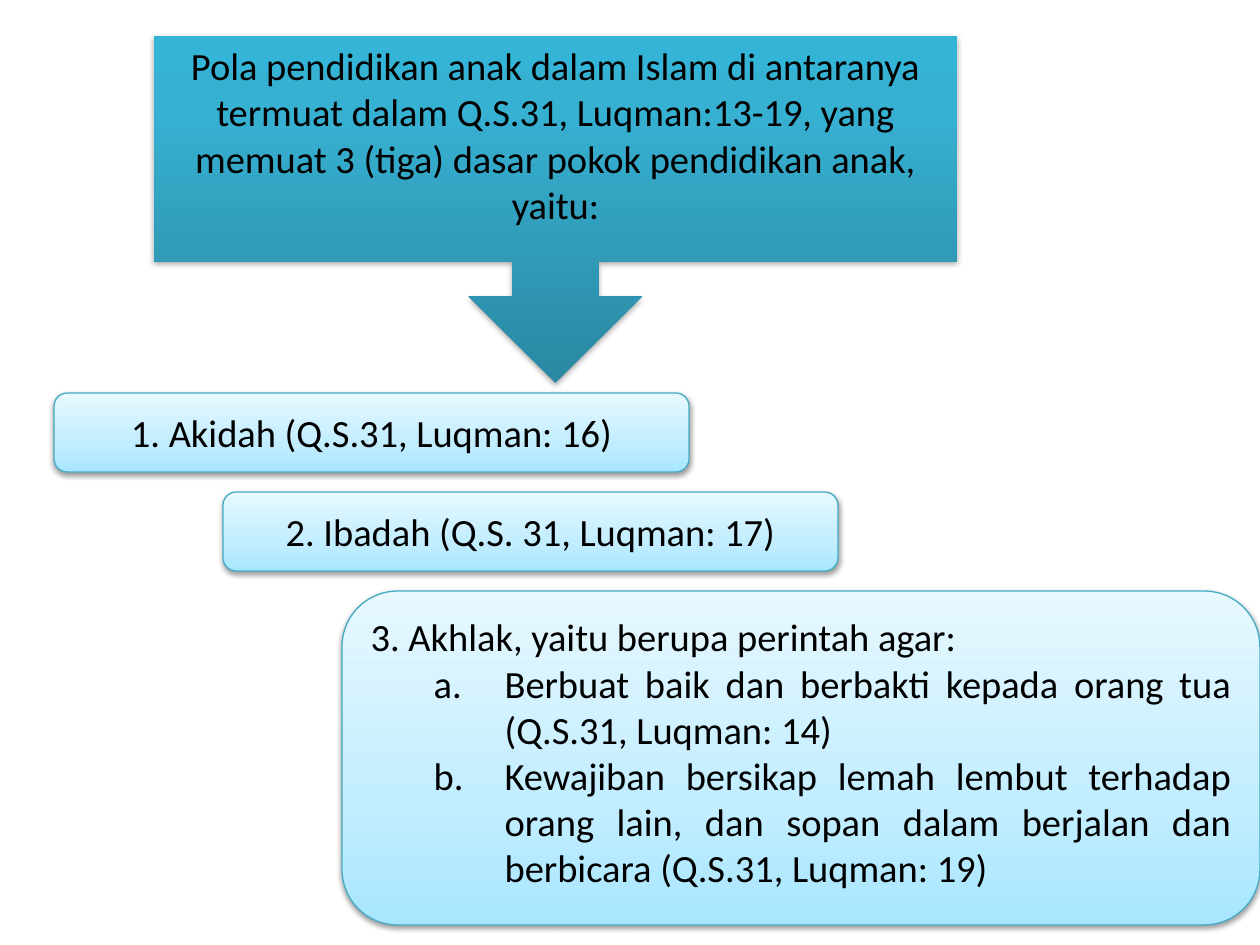
"""Build a slide on the three foundations of child education in Luqman 13-19."""
from copy import deepcopy

from lxml import etree
from pptx import Presentation
from pptx import util as u
from pptx.dml.color import RGBColor
from pptx.enum import shapes, text
from pptx.oxml.ns import qn

PX = 914400 // 126
C = {
    "ink": "000000", "line": "46AAC5",
    "teal_dark": "2A88A2", "teal_mid": "37B1D2", "teal_light": "34B4D6",
    "sky_dark": "A7E6FF", "sky_mid": "C1EDFF", "sky_light": "E7F8FF",
}
TEAL = [(0, "teal_dark"), (0.8, "teal_mid"), (1, "teal_light")]
SKY = [(0, "sky_dark"), (0.35, "sky_mid"), (1, "sky_light")]


def add_box(kind, box, stops, shadow_alpha, shadow_dist):
    sp = s.shapes.add_shape(kind, *[v * PX for v in box])
    sp.fill.gradient()
    sp.fill.gradient_angle = 90
    gs_list = sp._element.spPr.find(".//" + qn("a:gsLst"))
    gs_list.append(deepcopy(gs_list[0]))
    for stop, (position, name) in zip(sp.fill.gradient_stops, stops):
        stop.position = position
        stop.color.rgb = RGBColor.from_string(C[name])
    sp.line.fill.background()
    sp.shadow.inherit = False
    effects = sp._element.spPr.find(qn("a:effectLst"))
    shadow = etree.SubElement(
        effects, qn("a:outerShdw"), blurRad=str(u.Pt(3.1)),
        dist=str(u.Pt(shadow_dist)), dir="5400000", rotWithShape="0")
    color = etree.SubElement(shadow, qn("a:srgbClr"), val=C["ink"])
    etree.SubElement(color, qn("a:alpha"), val=str(shadow_alpha * 1000))
    sp.text_frame.word_wrap = True
    return sp


def add_text(p, words, align):
    p.alignment = align
    r = p.add_run()
    r.text = words
    r.font.name = "Calibri"
    r.font.size = u.Pt(22)
    r.font.color.rgb = RGBColor.from_string(C["ink"])


prs = Presentation()
prs.slide_width, prs.slide_height = u.Inches(10), u.Inches(7.5)
s = prs.slides.add_slide(prs.slide_layouts[6])
AL = text.PP_ALIGN
TOP, MIDDLE = text.MSO_ANCHOR.TOP, text.MSO_ANCHOR.MIDDLE

callout = add_box(shapes.MSO_SHAPE.DOWN_ARROW_CALLOUT, (154, 36, 803, 347), TEAL, 35, 1.8)
callout.text_frame.vertical_anchor = TOP
add_text(callout.text_frame.paragraphs[0],
         "Pola pendidikan anak dalam Islam di antaranya termuat dalam Q.S.31, "
         "Luqman:13-19, yang memuat 3 (tiga) dasar pokok pendidikan anak, yaitu:",
         AL.CENTER)

foundations = [
    ((54, 393, 635, 79), MIDDLE, AL.CENTER, "1. Akidah (Q.S.31, Luqman: 16)", []),
    ((223, 492, 615, 79), MIDDLE, AL.CENTER, "2. Ibadah (Q.S. 31, Luqman: 17)", []),
    ((342, 591, 918, 334), TOP, AL.LEFT, "3. Akhlak, yaitu berupa perintah agar:", [
        "Berbuat baik dan berbakti kepada orang tua (Q.S.31, Luqman: 14)",
        "Kewajiban bersikap lemah lembut terhadap orang lain, dan sopan "
        "dalam berjalan dan berbicara (Q.S.31, Luqman: 19)",
    ]),
]
for box, anchor, align, title, commands in foundations:
    sp = add_box(shapes.MSO_SHAPE.FLOWCHART_ALTERNATE_PROCESS, box, SKY, 38, 1.6)
    sp.line.color.rgb = RGBColor.from_string(C["line"])
    sp.line.width = u.Pt(0.75)
    tf = sp.text_frame
    tf.vertical_anchor = anchor
    add_text(tf.paragraphs[0], title, align)
    for command in commands:
        p = tf.add_paragraph()
        add_text(p, command, AL.JUSTIFY)
        p.level = 1
        pPr = p._p.get_or_add_pPr()
        pPr.set("marL", str(134 * PX))
        pPr.set("indent", str(-71 * PX))
        etree.SubElement(pPr, qn("a:buFont"), typeface="+mj-lt")
        etree.SubElement(pPr, qn("a:buAutoNum"), type="alphaLcPeriod")

prs.save("out.pptx")
